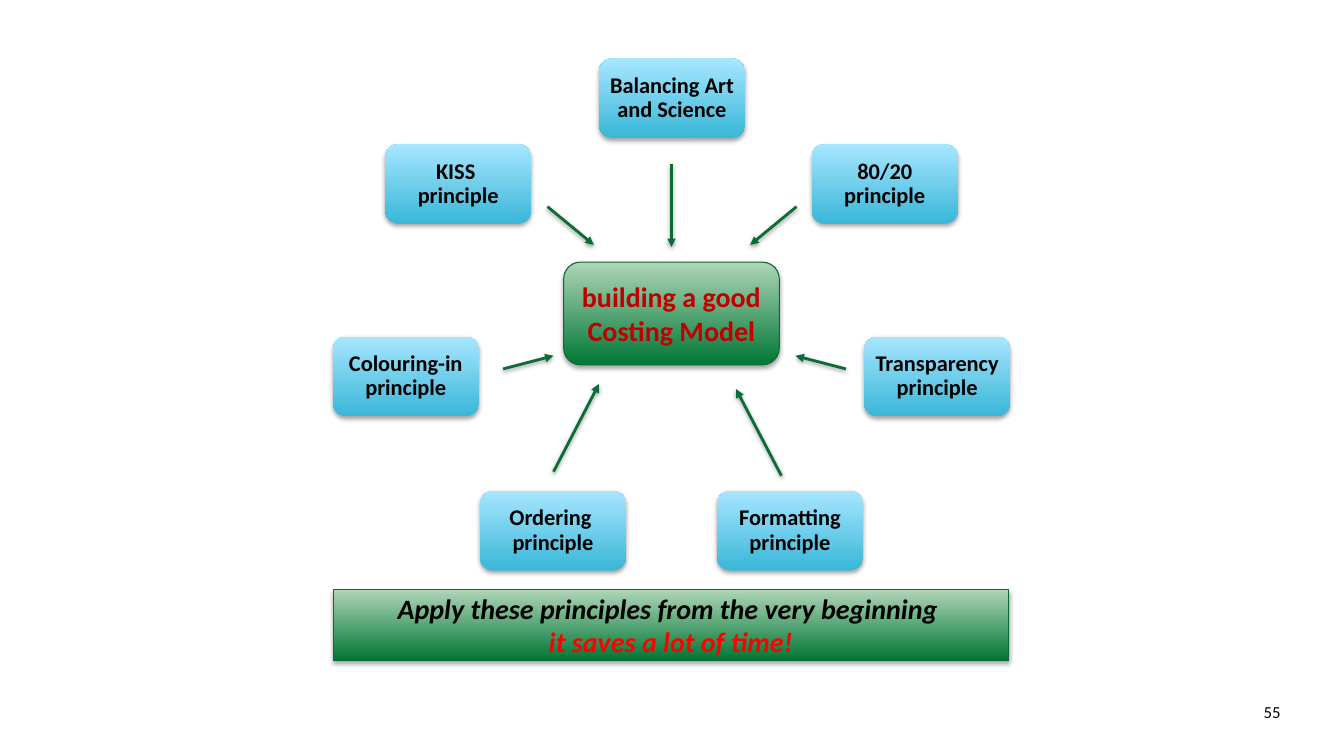
from math import cos, radians, sin

from lxml.etree import SubElement
from pptx import Presentation
from pptx.dml.color import RGBColor
from pptx.enum.shapes import MSO_CONNECTOR as Connector, MSO_SHAPE as Shape
from pptx.enum.text import MSO_ANCHOR as Anchor, PP_ALIGN as Align
from pptx.oxml.ns import qn
from pptx.util import Pt

PX = 9144
FONT = "Calibri"
COLORS = {
    "black": "000000",
    "dark_green": "007735",
    "light_green": "AFD5B7",
    "green_edge": "086C35",
    "arrow": "0B6C36",
    "dark_blue": "39B7D8",
    "light_blue": "A7E6FF",
    "core_text": "C00000",
    "emphasis": "FF0000",
}
GREENS = ("dark_green", "light_green")
BLUES = ("dark_blue", "light_blue")

PRINCIPLES = [
    ("Balancing Art and Science", (666, 163), (666, 245)),
    ("80/20\vprinciple", (790, 205), (744, 243)),
    ("Transparency principle", (839, 366), (789, 353)),
    ("Formatting principle", (775, 472), (730, 386)),
    ("Ordering \vprinciple", (549, 468), (594, 381)),
    ("Colouring-in principle", (499, 366), (549, 353)),
    ("KISS \vprinciple", (543, 205), (589, 243)),
]


def px(*lengths):
    return [round(length) * PX for length in lengths]


def rgb(name):
    return RGBColor.from_string(COLORS[name])


def add_shadow(item, distance, opacity):
    properties = item._element.spPr
    effects = properties.find(qn("a:effectLst"))
    if effects is None:
        effects = SubElement(properties, qn("a:effectLst"))
    shadow = SubElement(effects, qn("a:outerShdw"), blurRad="40000",
                        dist=str(distance), dir="5400000", rotWithShape="0")
    color = SubElement(shadow, qn("a:srgbClr"), val=COLORS["black"])
    SubElement(color, qn("a:alpha"), val=str(opacity * 1000))


def style_text(para, size, color, align=Align.CENTER, bold=True, italic=False):
    para.alignment = align
    font = para.font
    font.name, font.size = FONT, Pt(size)
    font.bold, font.italic = bold, italic
    font.color.rgb = rgb(color)


def add_panel(page, preset, box, shades, edge=None):
    panel = page.shapes.add_shape(preset, *px(*box))
    panel.fill.gradient()
    panel.fill.gradient_angle = 90
    for position, (stop, shade) in enumerate(zip(panel.fill.gradient_stops, shades)):
        stop.position = position
        stop.color.rgb = rgb(shade)
    if edge:
        panel.line.color.rgb = rgb(edge)
        panel.line.width = Pt(0.75)
    else:
        panel.line.fill.background()
    panel.shadow.inherit = False
    add_shadow(panel, 23000, 35)
    frame = panel.text_frame
    frame.word_wrap = True
    frame.vertical_anchor = Anchor.MIDDLE
    return frame


def add_core(page, box):
    para = add_panel(page, Shape.ROUNDED_RECTANGLE, box, GREENS, "green_edge").paragraphs[0]
    para.text = "building a good Costing Model"
    style_text(para, 20, "core_text")


def add_principle(page, box, label):
    frame = add_panel(page, Shape.ROUNDED_RECTANGLE, box, BLUES)
    frame.margin_left = frame.margin_right = 7 * PX
    frame.margin_top = frame.margin_bottom = 7 * PX
    para = frame.paragraphs[0]
    para.text = label
    para.line_spacing = 0.9
    style_text(para, 16, "black")


def add_arrow(page, start, end):
    arrow = page.shapes.add_connector(Connector.STRAIGHT, *px(*start, *end))
    arrow.line.color.rgb = rgb("arrow")
    arrow.line.width = Pt(2)
    SubElement(arrow._element.spPr.find(qn("a:ln")), qn("a:tailEnd"), type="triangle")
    add_shadow(arrow, 20000, 38)


def add_ring(page, box):
    left, top, width, height = box
    node_width, node_height = 145, 79
    for index, (label, start, end) in enumerate(PRINCIPLES):
        angle = radians(360 / len(PRINCIPLES) * index)
        center_x = left + width / 2 * (1 + sin(angle))
        center_y = top + height / 2 * (1 - cos(angle))
        node = (center_x - node_width / 2, center_y - node_height / 2,
                node_width, node_height)
        add_principle(page, node, label)
        add_arrow(page, start, end)


def add_banner(page, box):
    para = add_panel(page, Shape.RECTANGLE, box, GREENS, "green_edge").paragraphs[0]
    para.text = "Apply these principles from the very beginning \v"
    span = para.add_run()
    span.text = "it saves a lot of time!"
    span.font.color.rgb = rgb("emphasis")
    style_text(para, 20, "black", italic=True)


def add_page_number(page, box):
    frame = page.shapes.add_textbox(*px(*box)).text_frame
    frame.word_wrap = True
    para = frame.paragraphs[0]
    para.text = "55"
    style_text(para, 12, "black", Align.RIGHT, bold=False)


def main():
    deck = Presentation()
    deck.slide_width, deck.slide_height = px(1333, 750)
    page = deck.slides.add_slide(deck.slide_layouts[6])
    add_page_number(page, (1204, 691, 76, 39))
    add_core(page, (559, 260, 214, 102))
    add_ring(page, (396, 97, 540, 452))
    add_banner(page, (331, 585, 669, 70))
    deck.save("out.pptx")


if __name__ == "__main__":
    main()
